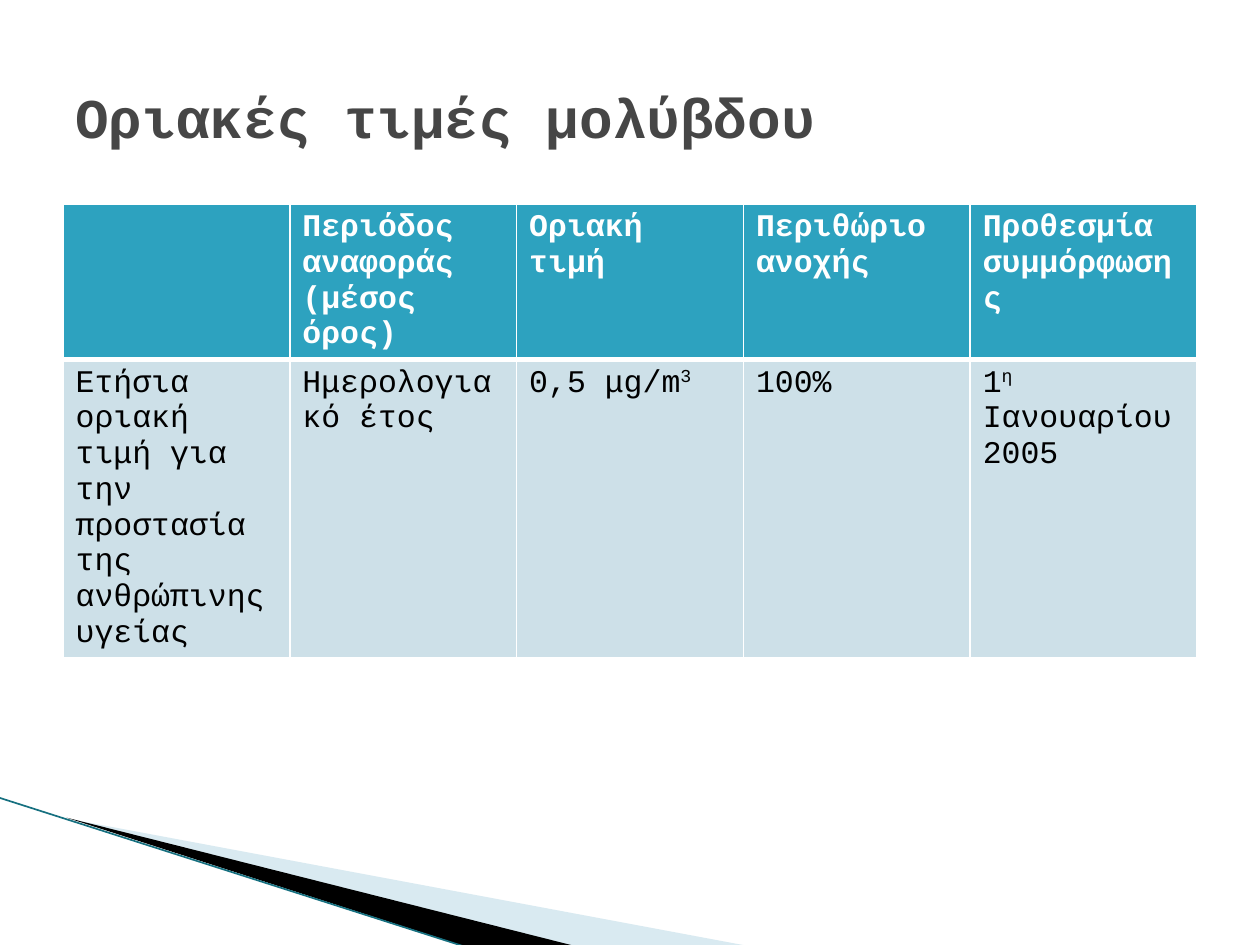
from lxml import etree
from pptx import Presentation
from pptx.dml.color import RGBColor
from pptx.enum.shapes import MSO_CONNECTOR
from pptx.enum.text import MSO_ANCHOR
from pptx.oxml.ns import qn
from pptx.util import Inches, Pt

FONT = "Courier New"
WHITE = RGBColor(0xFF, 0xFF, 0xFF)
BLACK = RGBColor(0, 0, 0)
TITLE_GREY = RGBColor(0x46, 0x46, 0x46)
HEADER_TEAL = RGBColor(0x2D, 0xA2, 0xBF)
BODY_BLUE = RGBColor(0xCD, 0xE0, 0xE8)
WEDGE_BLUE = RGBColor(0xA0, 0xCB, 0xDC)
LINE_TEAL = RGBColor(0x16, 0x70, 0x80)


def style(r, size, color, bold):
    r.font.name = FONT
    r.font.size = Pt(size)
    r.font.bold = bold
    r.font.color.rgb = color


def add_border(cell, side, width):
    ln = etree.SubElement(cell._tc.get_or_add_tcPr(), qn(f"a:{side}"), w=str(Pt(width)))
    fill = etree.SubElement(ln, qn("a:solidFill"))
    etree.SubElement(fill, qn("a:srgbClr"), val=str(WHITE))


prs = Presentation()
prs.slide_width, prs.slide_height = Inches(10), Inches(7.5)
s = prs.slides.add_slide(prs.slide_layouts[6])

# Corner wedges
wedges = [
    ([(0.55, 6.5), (5.95, 7.51), (4.56, 7.51)], WEDGE_BLUE, 40),
    ([(0.53, 6.49), (4.57, 7.51), (3.72, 7.52)], BLACK, 100),
]
for points, color, opacity in wedges:
    points = [(Inches(x), Inches(y)) for x, y in points]
    fb = s.shapes.build_freeform(*points[0])
    fb.add_line_segments(points[1:], close=True)
    sp = fb.convert_to_shape()
    sp.shadow.inherit = False
    sp.fill.solid()
    sp.fill.fore_color.rgb = color
    sp.line.fill.background()
    if opacity < 100:
        clr = sp._element.spPr.find(".//" + qn("a:srgbClr"))
        etree.SubElement(clr, qn("a:alpha"), val=str(opacity * 1000))

# Edge line
edge = s.shapes.add_connector(
    MSO_CONNECTOR.STRAIGHT, Inches(-0.01), Inches(6.33), Inches(3.71), Inches(7.52))
edge.line.color.rgb = LINE_TEAL
edge.line.width = Pt(0.95)
etree.SubElement(edge._element.spPr, qn("a:effectLst"))

# Limit value table: each cell is a list of (text, superscript) runs
rows = [
    [[], [("Περιόδος αναφοράς (μέσος όρος)", False)], [("Οριακή τιμή", False)],
     [("Περιθώριο ανοχής", False)], [("Προθεσμία συμμόρφωσης", False)]],
    [[("Ετήσια οριακή τιμή για την προστασία της ανθρώπινης υγείας", False)],
     [("Ημερολογιακό έτος", False)],
     [("0,5 μg/m", False), ("3", True)],
     [("100%", False)],
     [("1", False), ("η", True), (" Ιανουαρίου 2005", False)]],
]
heights = [1.22, 2.37]
table = s.shapes.add_table(
    2, 5, Inches(0.5), Inches(1.62), Inches(9), Inches(sum(heights))).table
for i, row in enumerate(rows):
    header = i == 0
    table.rows[i].height = Inches(heights[i])
    for j, runs in enumerate(row):
        cell = table.cell(i, j)
        for side in ("lnL", "lnR", "lnT", "lnB"):
            # A thick rule parts the header from the body
            thick = side == ("lnB" if header else "lnT")
            add_border(cell, side, 3 if thick else 1)
        cell.fill.solid()
        cell.fill.fore_color.rgb = HEADER_TEAL if header else BODY_BLUE
        p = cell.text_frame.paragraphs[0]
        for text, superscript in runs:
            r = p.add_run()
            r.text = text
            style(r, 18, WHITE if header else BLACK, header)
            if superscript:
                r._r.get_or_add_rPr().set("baseline", "30000")

# Title
tf = s.shapes.add_textbox(Inches(0.5), Inches(0.3), Inches(9), Inches(1.25)).text_frame
tf.word_wrap = True
tf.vertical_anchor = MSO_ANCHOR.MIDDLE
tf.text = "Οριακές τιμές μολύβδου"
style(tf.paragraphs[0].runs[0], 32, TITLE_GREY, True)

prs.save("out.pptx")
